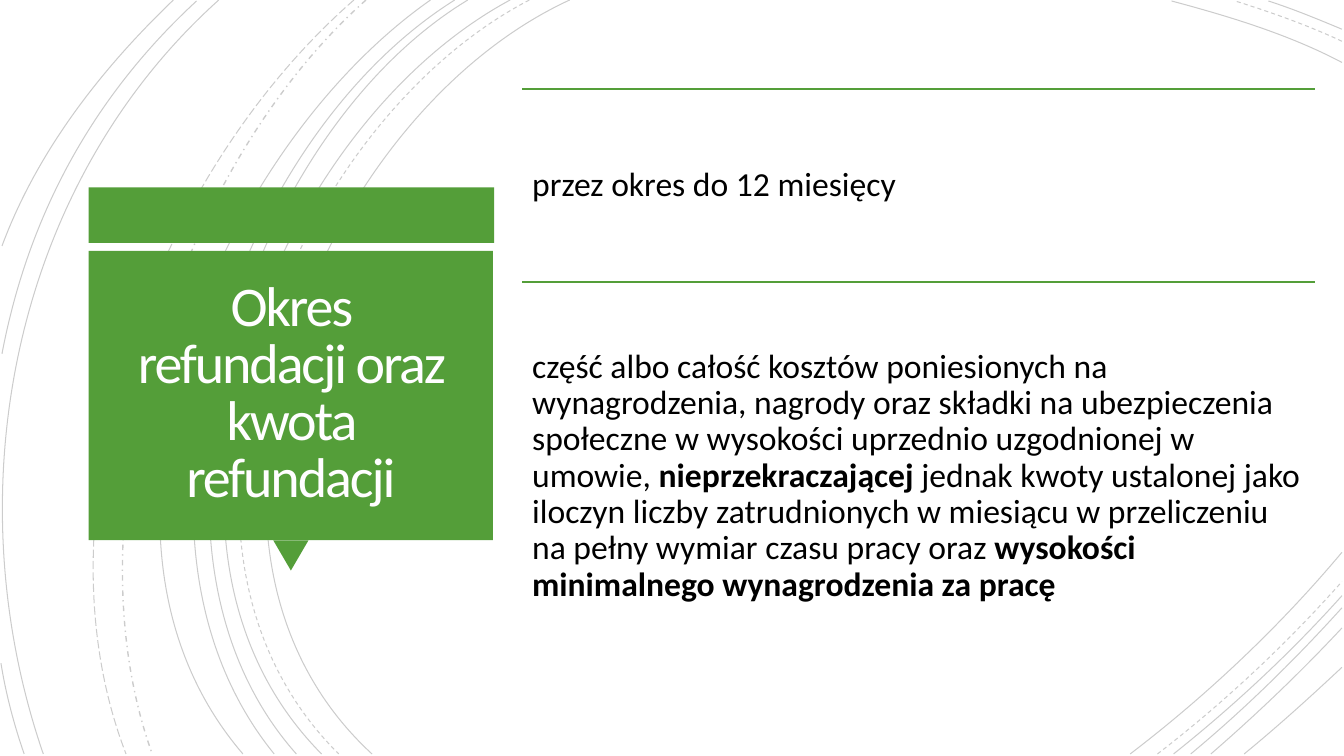
from lxml.etree import SubElement
from pptx import Presentation
from pptx.dml.color import RGBColor
from pptx.enum.dml import MSO_LINE_DASH_STYLE as Dash
from pptx.enum.shapes import MSO_CONNECTOR as Connector, MSO_SHAPE as Shape
from pptx.enum.text import MSO_ANCHOR as Anchor, MSO_AUTO_SIZE as AutoSize, PP_ALIGN as Align
from pptx.oxml.ns import qn
from pptx.util import Inches, Pt

# Grid of one-inch cells: columns run right, rows run down
COLUMNS, ROWS = 13.33, 7.5
EDGE, FOOT = 13.31, 7.48
COLORS = {"green": "549E39", "title": "FFFEFF", "text": "000000", "arc": "000000"}
FONT = "Calibri"

# Tall arcs: top column, two control points, foot column, dash, width
TALL_ARCS = [
    (5.65, 3.15, 1.15, 1.43, 5.4, 3.69, Dash.SOLID, 0.75),
    (5.25, 2.85, 1.25, 1.23, 5.37, 3.36, Dash.DASH, 0.75),
    (5.06, 2.7, 1.27, 1.1, 5.37, 3.19, Dash.SOLID, 0.75),
    (4.64, 2.44, 1.33, 1.1, 5.41, 2.94, Dash.SOLID, 0.75),
    (4.51, 2.31, 1.38, 0.97, 5.33, 2.72, Dash.SOLID, 0.75),
    (4.27, 2.17, 1.47, 0.53, 5.29, 2.41, Dash.SOLID, 0.75),
    (3.63, 1.76, 1.66, 0.65, 5.09, 1.51, Dash.DASH_DOT, 1),
    (3.51, 1.57, 1.69, 0.29, 4.99, 1.25, Dash.LONG_DASH, 0.75),
    (2.17, 0.11, 1.85, -0.46, 4.9, 0.43, Dash.SOLID, 0.75),
]
# Lower right arcs: foot column, two control points, row at the right edge, dash
LOWER_ARCS = [
    (11.21, 11.97, 6.9, 12.69, 6.22, 5.48, Dash.SOLID),
    (11.48, 12.13, 6.98, 12.75, 6.4, 5.77, Dash.DASH),
    (11.64, 12.23, 7.01, 12.8, 6.48, 5.91, Dash.SOLID),
    (11.81, 12.34, 7.04, 12.84, 6.55, 6.03, Dash.SOLID),
    (12.01, 12.46, 7.09, 12.9, 6.67, 6.23, Dash.SOLID),
    (12.34, 12.67, 7.21, 12.99, 6.92, 6.62, Dash.SOLID),
]
# Upper right arcs: row at the right edge, two control points, top column, dash
UPPER_ARCS = [
    (0.62, 12.78, 0.34, 12.18, 0.16, 11.62, Dash.SOLID),
    (0.41, 12.97, 0.25, 12.6, 0.12, 12.25, Dash.DASH),
    (0.29, 13.07, 0.19, 12.83, 0.09, 12.58, Dash.SOLID),
]
# Short arcs cut by the left edge: four points each
LEFT_ARCS = [
    (1.95, 0.01, 0.92, 0.96, 0.28, 2.14, 0.02, 3.51),
    (0.01, 6.58, 0.06, 6.89, 0.14, 7.19, 0.24, FOOT),
    (1.72, 0, 1, 0.69, 0.37, 1.5, 0.02, 2.44),
]

TITLE = "Okres refundacji oraz kwota refundacji"
# Sections: top row, height, (text, bold) parts
SECTIONS = [
    (0.88, 1.92, [("przez okres do 12 miesięcy", False)]),
    (2.8, 3.85, [
        ("część albo całość kosztów poniesionych na wynagrodzenia, nagrody oraz "
         "składki na ubezpieczenia społeczne w wysokości uprzednio uzgodnionej w "
         "umowie, ", False),
        ("nieprzekraczającej", True),
        (" jednak kwoty ustalonej jako iloczyn liczby zatrudnionych w miesiącu w "
         "przeliczeniu na pełny wymiar czasu pracy oraz ", False),
        ("wysokości minimalnego wynagrodzenia za pracę", True),
    ]),
]


def cells(*values):
    return [Inches(value) for value in values]


def color(name):
    return RGBColor.from_string(COLORS[name])


def set_values(target, values):
    for name, value in values.items():
        setattr(target, name, value)


def add_arc(shapes, points, dash=Dash.SOLID, width=0.75):
    """Draw one cubic curve through start, two controls and end."""
    pairs = [tuple(cells(*points[i:i + 2])) for i in range(0, 8, 2)]
    builder = shapes.build_freeform(*pairs[0])
    builder.add_line_segments(pairs[1:], close=False)
    arc = builder.convert_to_shape()
    arc.shadow.inherit = False
    arc.fill.background()
    arc.line.color.rgb = color("arc")
    set_values(arc.line, {"width": Pt(width), "dash_style": dash})
    fill = arc.line._ln.find(qn("a:solidFill"))
    SubElement(fill[0], qn("a:alpha"), val="20000")
    # Merge the three straight segments into one curve
    path = arc._element.find(".//" + qn("a:path"))
    curve = SubElement(path, qn("a:cubicBezTo"))
    for segment in path.findall(qn("a:lnTo")):
        curve.append(segment[0])
        path.remove(segment)


def add_arcs(slide):
    shapes = slide.shapes.add_group_shape().shapes
    for top, *controls, foot, dash, width in TALL_ARCS:
        add_arc(shapes, (top, 0, *controls, foot, FOOT), dash, width)
    for foot, *controls, row, dash in LOWER_ARCS:
        add_arc(shapes, (foot, FOOT, *controls, EDGE, row), dash)
    for row, *controls, top, dash in UPPER_ARCS:
        add_arc(shapes, (EDGE, row, *controls, top, 0.01), dash)
    for points in LEFT_ARCS:
        add_arc(shapes, points)


def add_block(shapes, kind, area, rotation=0):
    block = shapes.add_shape(kind, *cells(*area))
    block.shadow.inherit = False
    block.rotation = rotation
    block.fill.solid()
    block.fill.fore_color.rgb = color("green")
    block.line.fill.background()


def add_rule(slide, left, right, row):
    rule = slide.shapes.add_connector(Connector.STRAIGHT, *cells(left, row, right, row))
    rule.line.color.rgb = color("green")
    rule.line.width = Pt(1.25)
    SubElement(rule._element.spPr, qn("a:effectLst"))


def fill_text(box, parts, size, color_name, inset, para_values):
    frame = box.text_frame
    set_values(frame, {"word_wrap": True, "auto_size": AutoSize.NONE,
                       "vertical_anchor": Anchor.MIDDLE})
    set_values(frame, {"margin_" + side: Inches(inset)
                       for side in ("left", "top", "right", "bottom")})
    para = frame.paragraphs[0]
    set_values(para, para_values)
    for text, bold in parts:
        span = para.add_run()
        span.text = text
        set_values(span.font, {"name": FONT, "size": Pt(size), "bold": bold})
        span.font.color.rgb = color(color_name)
    return para


def add_title(slide):
    # Green callout behind the title
    shapes = slide.shapes.add_group_shape().shapes
    add_block(shapes, Shape.RECTANGLE, (0.88, 1.86, 4.02, 0.55))
    add_block(shapes, Shape.ISOSCELES_TRIANGLE, (2.71, 5.36, 0.35, 0.3), 180)
    add_block(shapes, Shape.RECTANGLE, (0.88, 2.49, 4.01, 2.87))
    # Title placeholder, brought in front of the callout
    title = slide.shapes.title
    slide.shapes._spTree.append(title._element)
    set_values(title, dict(zip(("left", "top", "width", "height"),
                               cells(0.97, 2.57, 3.83, 2.69))))
    para = fill_text(title, [(TITLE, False)], 40, "title", 0.25,
                     {"alignment": Align.CENTER, "line_spacing": 0.85})
    para.runs[0].font._element.set("spc", "-150")


def add_section(slide, top, height, parts):
    left, width = 5.18, 7.86
    add_rule(slide, left, left + width, top)
    box = slide.shapes.add_textbox(*cells(left, top, width, height))
    fill_text(box, parts, 24, "text", 0.1,
              {"alignment": Align.LEFT, "line_spacing": 0.9, "space_after": Pt(8)})


def main():
    deck = Presentation()
    deck.slide_width, deck.slide_height = cells(COLUMNS, ROWS)
    page = deck.slides.add_slide(deck.slide_layouts[5])
    add_arcs(page)
    add_title(page)
    for section in SECTIONS:
        add_section(page, *section)
    deck.save("out.pptx")


if __name__ == "__main__":
    main()
